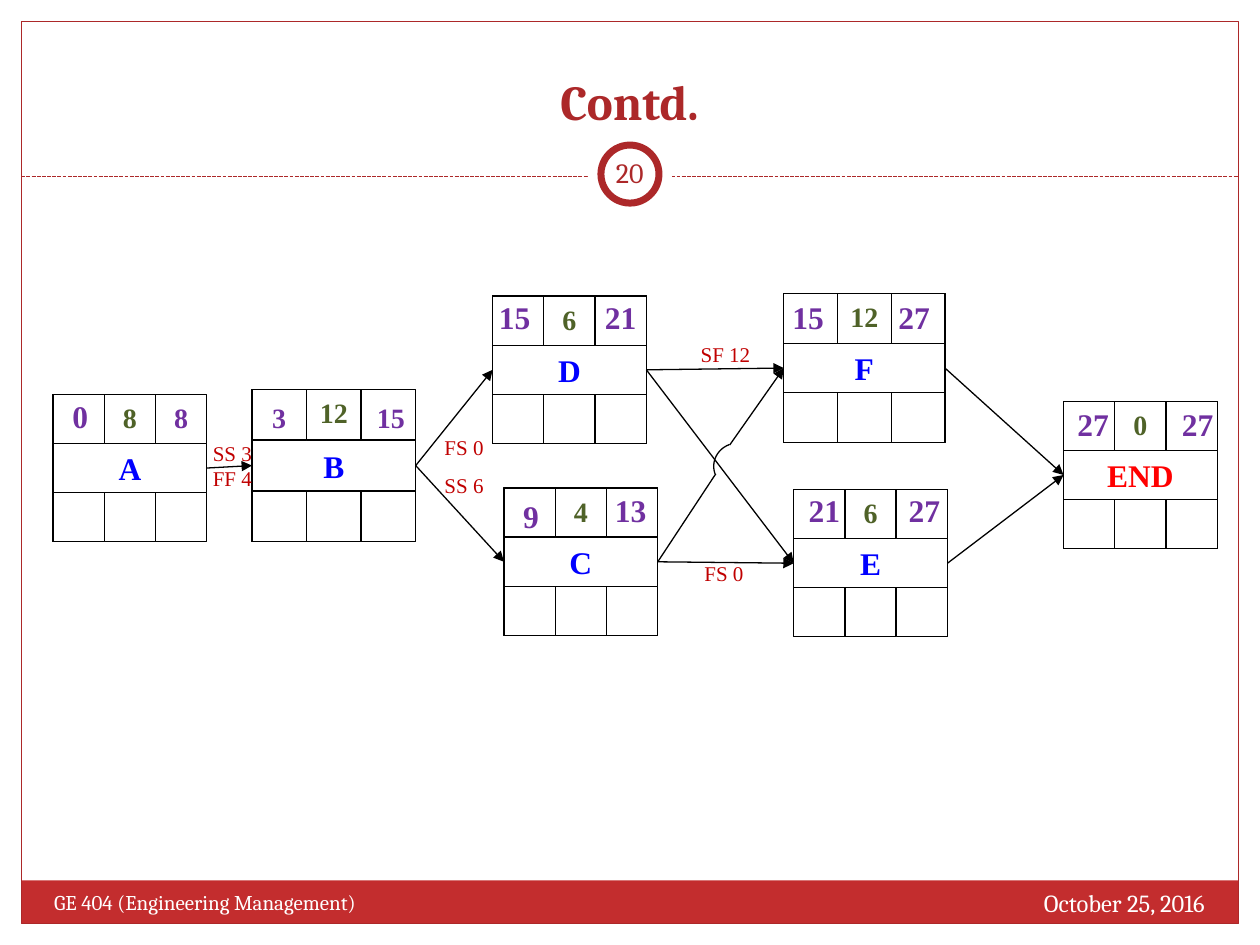
from pptx import Presentation
from pptx.dml.color import RGBColor
from pptx.enum.dml import MSO_LINE_DASH_STYLE as Dash
from pptx.enum.shapes import MSO_CONNECTOR as Link, MSO_SHAPE as Shape
from pptx.enum.text import MSO_ANCHOR as Anchor, PP_ALIGN as Align
from pptx.oxml.ns import qn
from pptx.util import Cm, Pt
from lxml.etree import SubElement

COLORS = {
    "white": "FFFFFF", "black": "000000", "band": "C32D2E", "frame": "AC2829",
    "activity": "0000FF", "finish": "FF0000", "duration": "4F6228",
    "date": "7030A0", "relation": "C00000",
}
SERIF, HEADING = "Times New Roman", "Cambria"
LEFT, RIGHT = 1, 3  # connection sites

# name: box, then early start and early finish as (text, size, shift x, shift y)
ACTIVITIES = {
    "A": ((1.07, 7.95, 3.1, 2.97), ("0", 18, 0.03, -0.08), "8", ("8", 16, 0, 0)),
    "B": ((5.08, 7.85, 3.3, 3.07), ("3", 16, 0, 0.1), "12", ("15", 16, 0.05, 0.1)),
    "D": ((9.93, 5.97, 3.1, 2.97), ("15", 18, -0.07, -0.08), "6", ("21", 18, 0, -0.08)),
    "C": ((10.16, 9.84, 3.1, 2.97), ("9", 18, 0.03, 0.06), "4", ("13", 18, -0.03, -0.06)),
    "END": ((21.44, 8.09, 3.1, 2.97), ("27", 18, 0.08, -0.04), "0", ("27", 18, 0.12, -0.04)),
    "E": ((16, 9.87, 3.1, 2.97), ("21", 18, 0.1, -0.09), "6", ("27", 18, 0.05, -0.09)),
    "F": ((15.8, 5.92, 3.25, 3), ("15", 18, -0.05, -0.03), "12", ("27", 18, -0.08, -0.03)),
}
LINKS = ["AB", "BD", "BC", "CE", "DE", "DF", ("F", "END"), ("E", "END")]
RELATIONS = [
    (["SS 3", "FF 4"], (3.81, 8.23, 1.75, 2.31)),
    (["FS 0"], (8.48, 8.26, 1.75, 1.5)),
    (["SS 6"], (8.48, 8.99, 1.75, 1.6)),
    (["SF 12"], (13.56, 6.27, 2.13, 1.75)),
    (["FS 0"], (13.72, 10.8, 1.75, 1.5)),
]


def rgb(name):
    return RGBColor.from_string(COLORS[name])


def write(shape, lines, size, color, align=Align.CENTER, anchor=Anchor.TOP,
          name=SERIF, bold=False):
    frame = shape.text_frame
    frame.word_wrap = True
    frame.vertical_anchor = anchor
    for index, line in enumerate(lines):
        para = frame.paragraphs[0] if index == 0 else frame.add_paragraph()
        para.alignment = align
        span = para.add_run()
        span.text = line
        for key, value in {"size": Pt(size), "name": name, "bold": bold}.items():
            setattr(span.font, key, value)
        span.font.color.rgb = rgb(color)


def add_text(page, box, lines, size, color, **formats):
    text = page.shapes.add_textbox(*map(Cm, box))
    write(text, lines, size, color, **formats)
    return text


def add_block(page, kind, box, fill="white", line="black", width=0.75):
    block = page.shapes.add_shape(kind, *map(Cm, box))
    block.shadow.inherit = False
    if fill:
        block.fill.solid()
        block.fill.fore_color.rgb = rgb(fill)
    else:
        block.fill.background()
    if line:
        block.line.color.rgb = rgb(line)
        block.line.width = Pt(width)
    else:
        block.line.fill.background()
    return block


def add_line(page, start, end, color="black", arrow=False):
    line = page.shapes.add_connector(Link.STRAIGHT, *map(Cm, (*start, *end)))
    line.line.color.rgb = rgb(color)
    line.line.width = Pt(0.75)
    properties = line._element.spPr
    if arrow:
        SubElement(properties.find(qn("a:ln")), qn("a:tailEnd"), type="triangle")
    SubElement(properties, qn("a:effectLst"))
    return line


def add_frame(page, box):
    """Border, footer band, dashed rule and page number."""
    left, top, width, height = box
    bottom, middle = top + height, left + width / 2
    add_block(page, Shape.RECTANGLE, (left, bottom - 0.87, width, 0.87), "band", None)
    add_block(page, Shape.RECTANGLE, box, None, "frame")
    rule = add_line(page, (left, top + 3.13), (left + width, top + 3.13), "frame")
    rule.line.dash_style = Dash.SQUARE_DOT
    for size, line in ((1.7, None), (1.17, "frame")):
        ring = (middle - size / 2, top + 3.08 - size / 2, size, size)
        add_block(page, Shape.OVAL, ring, "white", line, 4)
    number = add_text(page, (middle - 0.64, top + 2.44, 1.27, 1.22), ["20"], 16,
                      "frame", anchor=Anchor.MIDDLE, name=HEADING)
    for side in ("left", "top", "right", "bottom"):
        setattr(number.text_frame, f"margin_{side}", Cm(0.13))
    add_text(page, (left + width - 8.89, bottom - 0.84, 8.46, 1.02),
             ["October 25, 2016"], 14, "white", align=Align.RIGHT, name=HEADING)
    add_text(page, (left + 0.41, bottom - 0.81, 9.96, 1.02),
             ["GE 404 (Engineering Management)"], 12, "white",
             align=Align.LEFT, name=HEADING)


def add_title(page, box):
    title = page.shapes.title
    for key, value in zip(("left", "top", "width", "height"), box):
        setattr(title, key, Cm(value))
    write(title, ["Contd."], 28, "frame", anchor=Anchor.BOTTOM, name=HEADING, bold=True)


def add_activity(page, name, box, start, duration, finish):
    """Node with three cells above and three below its name."""
    left, top, width, height = box
    cell_width, cell_height = width / 3, height / 3
    node = add_block(page, Shape.RECTANGLE, box)
    write(node, [name], 18, "finish" if name == "END" else "activity",
          anchor=Anchor.MIDDLE, bold=True)
    for row in (0, 2):
        for column in range(3):
            cell = add_block(page, Shape.RECTANGLE,
                             (left + column * cell_width, top + row * cell_height,
                              cell_width, cell_height))
            if (row, column) == (0, 1):
                write(cell, [duration], 16, "duration", bold=True)
    for column, (text, size, shift_x, shift_y) in ((0, start), (2, finish)):
        center = left + (column + 0.5) * cell_width + shift_x
        add_text(page, (center - 0.62, top + shift_y, 1.24, 1.02), [text], size,
                 "date", bold=True)
    return node


def add_network(page):
    nodes = {name: add_activity(page, name, *parts)
             for name, parts in ACTIVITIES.items()}
    for first, second in LINKS:
        line = add_line(page, (0, 0), (1, 1), arrow=True)
        line.begin_connect(nodes[first], RIGHT)
        line.end_connect(nodes[second], LEFT)
    # C to F hops over the line from D to E
    hop = add_block(page, Shape.ARC, (14.4, 8.92, 0.91, 0.94), None)
    hop.rotation = 250.4
    add_line(page, (14.43, 9.55), (13.26, 11.33)).end_connect(nodes["C"], RIGHT)
    add_line(page, (14.71, 8.97), (15.8, 7.42), arrow=True).end_connect(nodes["F"], LEFT)
    for lines, box in RELATIONS:
        add_text(page, box, lines, 12, "relation", anchor=Anchor.MIDDLE)


def main():
    deck = Presentation()
    deck.slide_width, deck.slide_height = Cm(25.4), Cm(19.05)
    page = deck.slides.add_slide(deck.slide_layouts[5])
    add_frame(page, (0.43, 0.43, 24.54, 18.19))
    add_title(page, (0.84, 0.64, 23.7, 2.11))
    add_network(page)
    deck.save("out.pptx")


if __name__ == "__main__":
    main()
